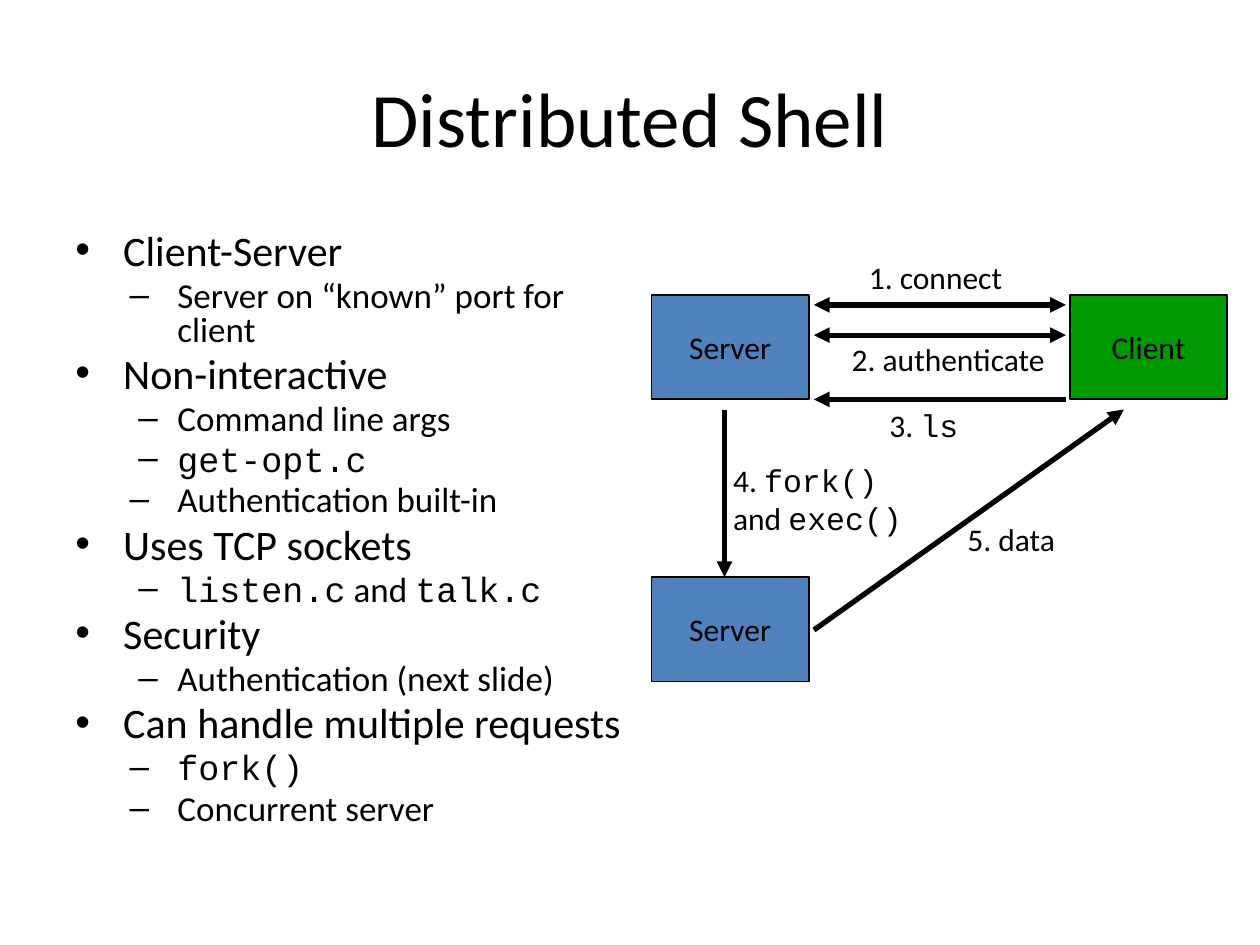
from dataclasses import dataclass

from pptx import Presentation
from pptx import util as u
from pptx.dml.color import RGBColor
from pptx.enum import shapes, text
from pptx.oxml.ns import qn
from lxml import etree


@dataclass(frozen=True)
class Theme:
    body_font: str = "Calibri"
    code_font: str = "Courier New"
    ink: str = "000000"
    paper: str = "FFFFFF"
    server: str = "4F81BD"
    client: str = "009900"
    title_size: int = 44
    point_size: int = 24
    detail_size: int = 20
    label_size: int = 18
    border: int = 1
    arrow: int = 3


def apply_format(target, values):
    for name, value in values.items():
        setattr(target, name, value)


class SlideBuilder:
    def __init__(self, slide, theme):
        self.slide = slide
        self.theme = theme

    def add_text(self, paragraph, content, size, align=text.PP_ALIGN.LEFT):
        paragraph.alignment = align
        for index, part in enumerate(content.split("`")):
            if not part:
                continue
            run = paragraph.add_run()
            run.text = part
            apply_format(run.font, {
                "name": self.theme.code_font if index % 2 else self.theme.body_font,
                "size": u.Pt(size),
            })
            run.font.color.rgb = RGBColor.from_string(self.theme.ink)

    def text_box(self, area, **frame_format):
        shape = self.slide.shapes.add_textbox(*map(u.Inches, area))
        apply_format(shape.text_frame, frame_format)
        return shape

    def title(self, content, area):
        shape = self.text_box(area, word_wrap=True, vertical_anchor=text.MSO_ANCHOR.MIDDLE)
        self.add_text(shape.text_frame.paragraphs[0], content,
                      self.theme.title_size, text.PP_ALIGN.CENTER)

    def outline(self, items, area):
        shape = self.text_box(area, word_wrap=True)
        shape.fill.solid()
        shape.fill.fore_color.rgb = RGBColor.from_string(self.theme.paper)
        frame = shape.text_frame
        for index, (level, hanging, content) in enumerate(items):
            paragraph = frame.add_paragraph() if index else frame.paragraphs[0]
            size = self.theme.detail_size if level else self.theme.point_size
            self.add_text(paragraph, content, size)
            apply_format(paragraph, {
                "level": level,
                "line_spacing": 0.8,
                "space_before": u.Pt(size * 0.2),
            })
            properties = paragraph._p.get_or_add_pPr()
            properties.set("marL", str(u.Inches(0.81 if level else 0.38)))
            properties.set("indent", str(-u.Inches(hanging)))
            etree.SubElement(properties, qn("a:buFont"), typeface="Arial")
            etree.SubElement(properties, qn("a:buChar"), char="–" if level else "•")

    def box(self, content, left, top, color):
        shape = self.slide.shapes.add_shape(
            shapes.MSO_SHAPE.RECTANGLE, *map(u.Inches, (left, top, 1.25, 0.83)))
        shape.shadow.inherit = False
        shape.fill.solid()
        shape.fill.fore_color.rgb = RGBColor.from_string(color)
        shape.line.color.rgb = RGBColor.from_string(self.theme.ink)
        shape.line.width = u.Pt(self.theme.border)
        apply_format(shape.text_frame, {
            "word_wrap": False,
            "vertical_anchor": text.MSO_ANCHOR.MIDDLE,
        })
        self.add_text(shape.text_frame.paragraphs[0], content,
                      self.theme.label_size, text.PP_ALIGN.CENTER)

    def label(self, lines, area, align=text.PP_ALIGN.LEFT):
        shape = self.text_box(area, word_wrap=False,
                              auto_size=text.MSO_AUTO_SIZE.SHAPE_TO_FIT_TEXT)
        frame = shape.text_frame
        for index, content in enumerate(lines):
            paragraph = frame.add_paragraph() if index else frame.paragraphs[0]
            self.add_text(paragraph, content, self.theme.label_size, align)

    def arrow(self, start, end, both_ways=False):
        connector = self.slide.shapes.add_connector(
            shapes.MSO_CONNECTOR.STRAIGHT, *map(u.Inches, (*start, *end)))
        connector.line.color.rgb = RGBColor.from_string(self.theme.ink)
        connector.line.width = u.Pt(self.theme.arrow)
        line = connector.line._get_or_add_ln()
        for name in ("a:headEnd", "a:tailEnd") if both_ways else ("a:tailEnd",):
            etree.SubElement(line, qn(name), type="triangle")
        etree.SubElement(connector._element.spPr, qn("a:effectLst"))


def main():
    presentation = Presentation()
    presentation.slide_width = u.Inches(10)
    presentation.slide_height = u.Inches(7.5)
    theme = Theme()
    slide = presentation.slides.add_slide(presentation.slide_layouts[6])
    builder = SlideBuilder(slide, theme)

    builder.title("Distributed Shell", (0.5, 0.3, 9, 1.25))
    builder.outline([
        (0, 0.38, "Client-Server"),
        (1, 0.38, "Server on “known” port for client"),
        (0, 0.38, "Non-interactive"),
        (1, 0.31, "Command line args"),
        (1, 0.31, "`get-opt.c`"),
        (1, 0.38, "Authentication built-in"),
        (0, 0.38, "Uses TCP sockets"),
        (1, 0.31, "`listen.c` and `talk.c`"),
        (0, 0.38, "Security"),
        (1, 0.31, "Authentication (next slide)"),
        (0, 0.38, "Can handle multiple requests"),
        (1, 0.38, "`fork()`"),
        (1, 0.38, "Concurrent server"),
    ], (0.5, 1.81, 4.67, 5.02))

    for content, left, top, color in (
        ("Server", 5.17, 2.34, theme.server),
        ("Client", 8.49, 2.34, theme.client),
        ("Server", 5.17, 4.58, theme.server),
    ):
        builder.box(content, left, top, color)

    client_edge, server_edge = 8.46, 6.46
    for y, both_ways in ((2.42, True), (2.66, True), (3.17, False)):
        builder.arrow((client_edge, y), (server_edge, y), both_ways)
    builder.arrow((5.75, 3.25), (5.75, 4.58))
    builder.arrow((server_edge, 5), (8.92, 3.25))

    center = text.PP_ALIGN.CENTER
    builder.label(["1. connect"], (6.79, 2, 1.27, 0.4), center)
    builder.label(["2. authenticate"], (6.65, 2.65, 1.75, 0.4), center)
    builder.label(["3. `ls`"], (6.96, 3.17, 0.75, 0.4))
    builder.label(["4. `fork()`", "and `exec()`"], (5.72, 3.61, 1.55, 0.71))
    builder.label(["5. data"], (7.58, 4.08, 0.9, 0.4))

    presentation.save("out.pptx")


if __name__ == "__main__":
    main()
